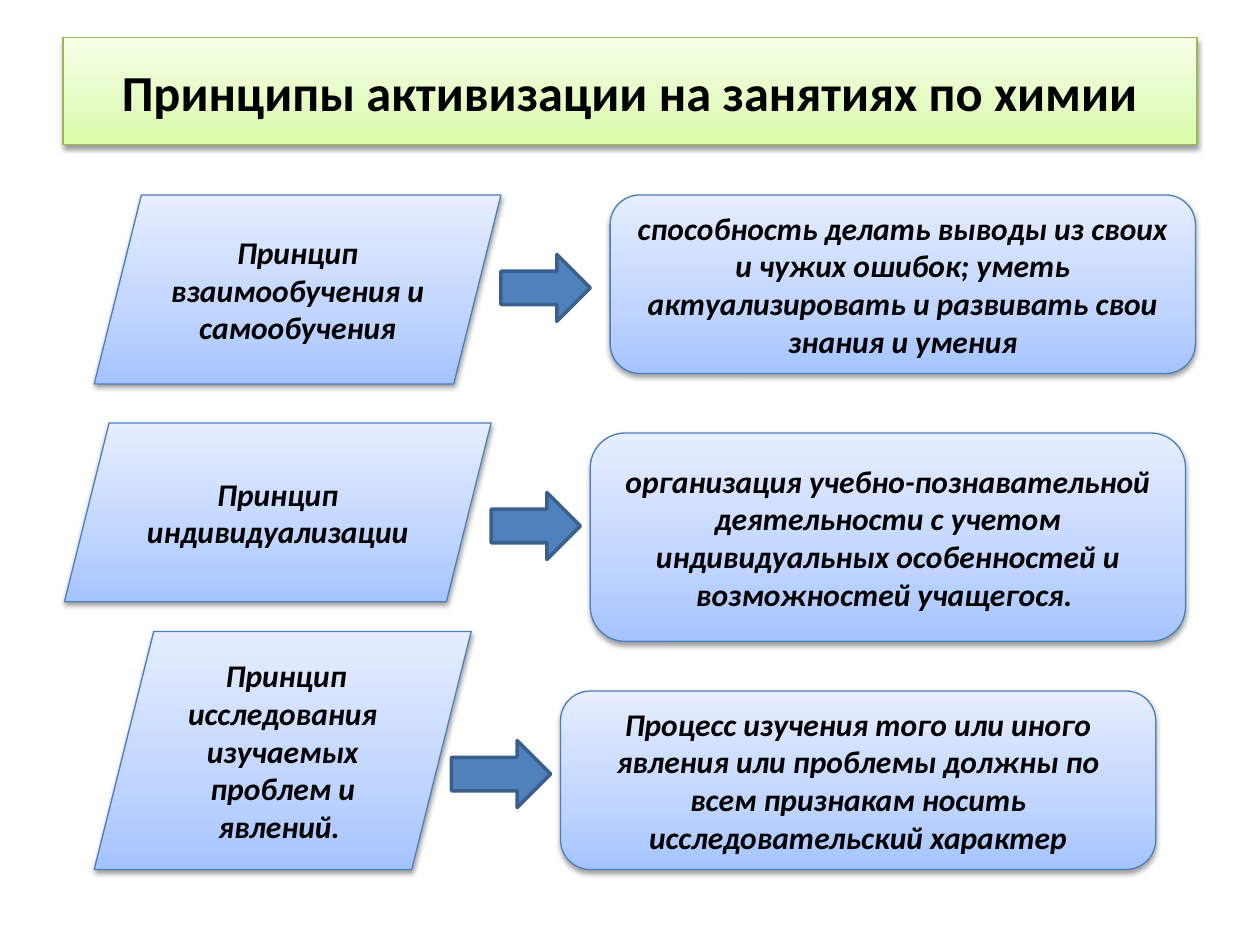
from dataclasses import dataclass

from lxml import etree
from pptx import Presentation
from pptx import util as u
from pptx.dml.color import RGBColor
from pptx.enum import shapes, text
from pptx.oxml.ns import qn

COLORS = {
    "text": "000000",
    "blue_line": "4B7EBC",
    "green_line": "98B955",
    "arrow": "4F81BD",
    "arrow_line": "3A5F8C",
}
BLUE = {0: "A4C4FF", 35: "BFD4FF", 100: "E6EEFF"}
GREEN = {0: "DAFDA7", 35: "E4FCC2", 100: "F5FFE7"}
SHAPE = shapes.MSO_SHAPE


@dataclass
class Box:
    left: float
    top: float
    width: float
    height: float

    def lengths(self) -> list:
        return [u.Cm(v) for v in (self.left, self.top, self.width, self.height)]


@dataclass
class Principle:
    name: str
    name_box: Box
    meaning: str
    meaning_box: Box
    arrow_box: Box


PRINCIPLES = [
    Principle(
        "Принцип взаимообучения и самообучения",
        Box(1.9, 3.93, 8.2, 3.81),
        "способность делать выводы из своих и чужих ошибок; "
        "уметь актуализировать и развивать свои знания и умения",
        Box(12.3, 3.93, 11.8, 3.6),
        Box(10.1, 5.13, 1.8, 1.35),
    ),
    Principle(
        "Принцип индивидуализации",
        Box(1.3, 8.53, 8.6, 3.6),
        "организация учебно-познавательной деятельности с учетом "
        "индивидуальных особенностей и возможностей учащегося. ",
        Box(11.9, 8.73, 12, 4.2),
        Box(9.9, 9.93, 1.8, 1.35),
    ),
    Principle(
        " Принцип исследования изучаемых проблем и явлений. ",
        Box(1.9, 12.73, 7.6, 4.8),
        "Процесс изучения того или иного явления или проблемы должны "
        "по всем признакам носить исследовательский характер",
        Box(11.3, 13.93, 12, 3.6),
        Box(9.1, 14.93, 2, 1.35),
    ),
]


def rgb(name: str) -> RGBColor:
    return RGBColor.from_string(COLORS[name])


def set_line(sp, color: str, width: float) -> None:
    sp.line.color.rgb = rgb(color)
    sp.line.width = u.Pt(width)


def add_color(parent, value: str):
    return etree.SubElement(parent, qn("a:srgbClr"), val=value)


def style_panel(sp, stops: dict, line: str) -> None:
    sp.fill.gradient()
    sp.fill.gradient_angle = 90
    stop_list = next(sp.element.spPr.iter(qn("a:gsLst")))
    for old in list(stop_list):
        stop_list.remove(old)
    for pos, value in stops.items():
        add_color(etree.SubElement(stop_list, qn("a:gs"), pos=str(pos * 1000)), value)
    set_line(sp, line, 0.75)
    sp.shadow.inherit = False
    shadow = etree.SubElement(
        sp.element.spPr.find(qn("a:effectLst")), qn("a:outerShdw"),
        blurRad="40000", dist="20000", dir="5400000", rotWithShape="0")
    etree.SubElement(add_color(shadow, "000000"), qn("a:alpha"), val="38000")


def write(sp, words: str, size: float, italic: bool) -> None:
    tf = sp.text_frame
    tf.word_wrap = True
    tf.vertical_anchor = text.MSO_ANCHOR.MIDDLE
    p = tf.paragraphs[0]
    p.text = words
    p.alignment = text.PP_ALIGN.CENTER
    p.font.name = "Calibri"
    p.font.size = u.Pt(size)
    p.font.bold = True
    p.font.italic = italic
    p.font.color.rgb = rgb("text")


def add_panel(s, kind: SHAPE, box: Box, words: str) -> None:
    sp = s.shapes.add_shape(kind, *box.lengths())
    style_panel(sp, BLUE, "blue_line")
    write(sp, words, 18, True)


def add_arrow(s, box: Box) -> None:
    sp = s.shapes.add_shape(SHAPE.RIGHT_ARROW, *box.lengths())
    sp.fill.solid()
    sp.fill.fore_color.rgb = rgb("arrow")
    set_line(sp, "arrow_line", 2)
    sp.shadow.inherit = False


def add_title(s, box: Box, words: str) -> None:
    sp = s.shapes.title
    sp.left, sp.top, sp.width, sp.height = box.lengths()
    style_panel(sp, GREEN, "green_line")
    write(sp, words, 28.8, False)


def main() -> None:
    prs = Presentation()
    prs.slide_width, prs.slide_height = u.Cm(25.4), u.Cm(19.05)
    s = prs.slides.add_slide(prs.slide_layouts[5])
    add_title(s, Box(1.27, 0.76, 22.86, 2.16),
              "Принципы активизации на занятиях по химии")
    for item in PRINCIPLES:
        add_panel(s, SHAPE.PARALLELOGRAM, item.name_box, item.name)
        add_panel(s, SHAPE.ROUNDED_RECTANGLE, item.meaning_box, item.meaning)
        add_arrow(s, item.arrow_box)
    prs.save("out.pptx")


if __name__ == "__main__":
    main()
